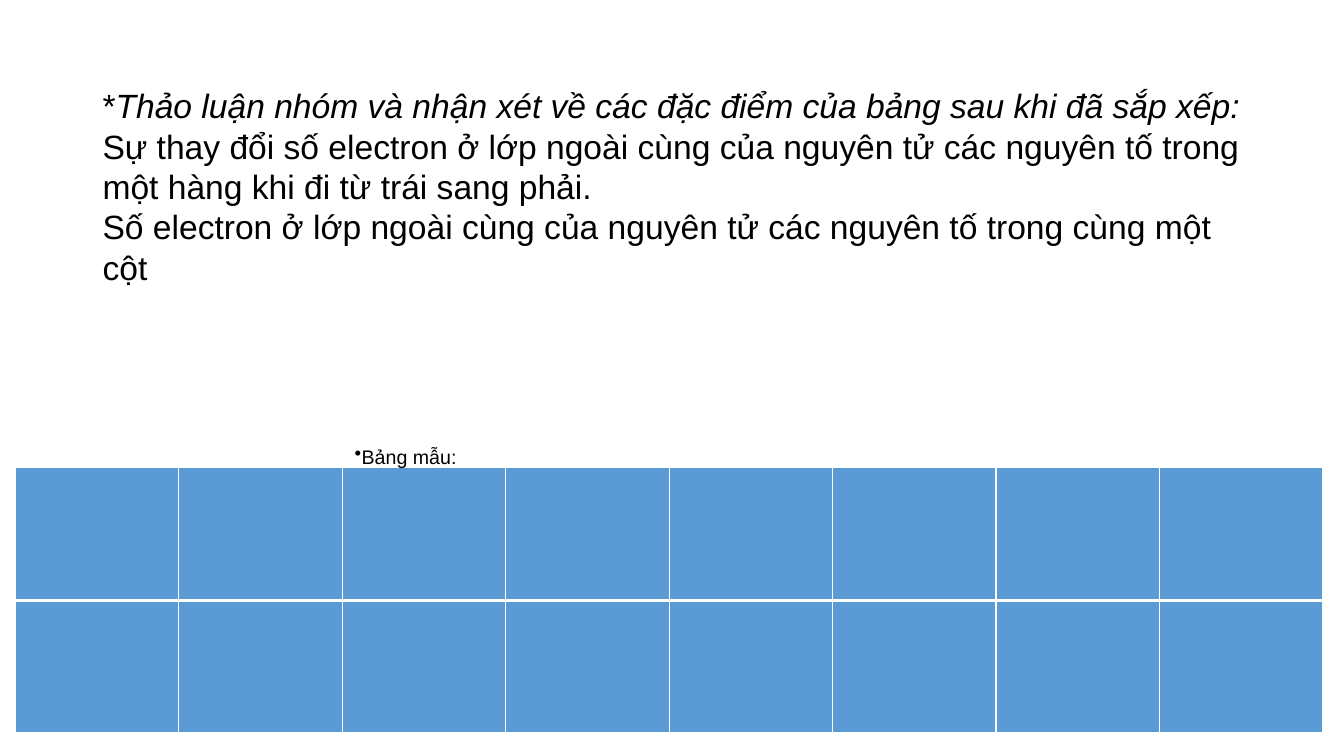
from lxml import etree
from pptx import Presentation
from pptx import util as u
from pptx.dml.color import RGBColor
from pptx.enum import text
from pptx.oxml.ns import qn


def colour(value):
    return RGBColor.from_string(value)


class SlideBuilder:
    """Hold the style and the current slide, and add its elements."""

    black, white, blue = "000000", "FFFFFF", "5B9BD5"
    font_name = "Arial"

    def __init__(self, presentation):
        self.slide = presentation.slides.add_slide(presentation.slide_layouts[5])

    def place(self, shape, left, top, width, height):
        box = {"left": left, "top": top, "width": width, "height": height}
        for name, value in box.items():
            setattr(shape, name, u.Cm(value))

    def format_frame(self, frame, wrap):
        settings = {
            "word_wrap": wrap,
            "auto_size": text.MSO_AUTO_SIZE.NONE,
            "vertical_anchor": text.MSO_ANCHOR.MIDDLE,
        }
        for name, value in settings.items():
            setattr(frame, name, value)

    def add_run(self, paragraph, words, size, italic=False):
        run = paragraph.add_run()
        run.text = words
        settings = {"name": self.font_name, "size": u.Pt(size), "italic": italic, "bold": False}
        for name, value in settings.items():
            setattr(run.font, name, value)
        run.font.color.rgb = colour(self.black)

    def title(self, lines, size, *box):
        shape = self.slide.shapes.title
        self.place(shape, *box)
        self.format_frame(shape.text_frame, True)
        paragraph = shape.text_frame.paragraphs[0]
        paragraph.alignment = text.PP_ALIGN.LEFT
        for index, line in enumerate(lines):
            if index:
                paragraph.add_line_break()
            for words, italic in line:
                self.add_run(paragraph, words, size, italic)

    def bullet(self, words, size, *box):
        shape = self.slide.shapes.add_textbox(*map(u.Cm, box))
        self.format_frame(shape.text_frame, False)
        paragraph = shape.text_frame.paragraphs[0]
        self.add_run(paragraph, words, size)
        properties = paragraph._p.get_or_add_pPr()
        for name in ("marL", "indent"):
            properties.set(name, "0")
        etree.SubElement(properties, qn("a:buChar")).set("char", "•")

    def border(self, cell, side, points):
        line = etree.Element(qn(f"a:{side}"), w=str(u.Pt(points)))
        fill = etree.SubElement(line, qn("a:solidFill"))
        etree.SubElement(fill, qn("a:srgbClr")).set("val", self.white)
        return line

    def table(self, rows, columns, *box):
        table = self.slide.shapes.add_table(rows, columns, *map(u.Cm, box)).table
        for row in range(rows):
            for column in range(columns):
                cell = table.cell(row, column)
                cell.fill.solid()
                cell.fill.fore_color.rgb = colour(self.blue)
                widths = {
                    "lnL": 1,
                    "lnR": 1,
                    "lnT": 3 if row else 1,
                    "lnB": 3 if row < rows - 1 else 1,
                }
                properties = cell._tc.get_or_add_tcPr()
                for index, (side, points) in enumerate(widths.items()):
                    properties.insert(index, self.border(cell, side, points))


def main():
    presentation = Presentation()
    presentation.slide_width = u.Cm(33.87)
    presentation.slide_height = u.Cm(19.05)
    builder = SlideBuilder(presentation)
    lines = [
        [("*", False),
         ("Thảo luận nhóm và nhận xét về các đặc điểm của bảng sau khi đã sắp xếp:", True)],
        [("Sự thay đổi số electron ở lớp ngoài cùng của nguyên tử các nguyên tố trong "
          "một hàng khi đi từ trái sang phải.", False)],
        [("Số electron ở lớp ngoài cùng của nguyên tử các nguyên tố trong cùng một cột", False)],
    ]
    builder.title(lines, 24, 2.33, 1.02, 29.21, 7.34)
    builder.table(2, 8, 0.39, 11.79, 32.95, 6.68)
    builder.bullet("Bảng mẫu:", 14, 8.69, 11, 4, 1)
    presentation.save("out.pptx")


if __name__ == "__main__":
    main()
